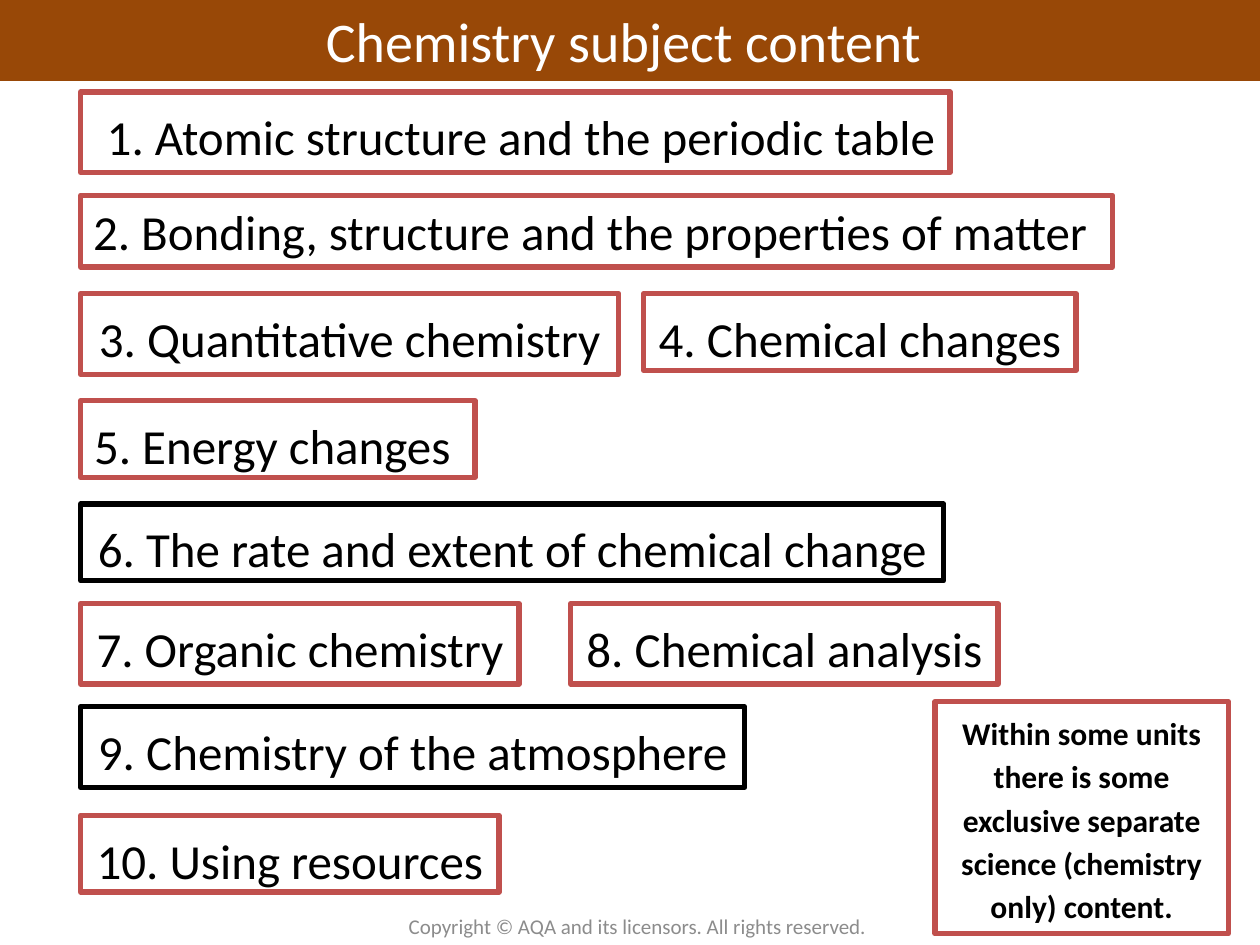
from dataclasses import dataclass

from pptx import Presentation
from pptx.dml.color import RGBColor
from pptx.enum.shapes import MSO_SHAPE
from pptx.enum.text import MSO_ANCHOR, MSO_AUTO_SIZE, PP_ALIGN
from pptx.util import Inches, Pt

RECT = MSO_SHAPE.RECTANGLE
TOP, MIDDLE = MSO_ANCHOR.TOP, MSO_ANCHOR.MIDDLE
LEFT, CENTER = PP_ALIGN.LEFT, PP_ALIGN.CENTER
GROW = MSO_AUTO_SIZE.SHAPE_TO_FIT_TEXT

FONT = "Calibri"
RED, BLACK, WHITE = "C0504D", "000000", "FFFFFF"
BROWN, GREY = "984807", "8C8C8C"
EDGE = 0.64
TALL, SHORT = 0.64, 0.61


@dataclass
class Box:
    text: str
    left: float
    top: float
    width: float
    height: float
    line: str = RED
    fill: str = WHITE
    weight: float = 3
    size: int = 28
    color: str = BLACK
    bold: bool = False
    wrap: bool = False
    align: PP_ALIGN = CENTER
    spacing: float = 1.15


TOPICS = [
    Box("\u00a01. Atomic structure and the periodic table".replace("\u00a0", " "),
        EDGE, 0.73, 6.9, TALL),
    Box("2. Bonding, structure and the properties of matter",
        EDGE, 1.55, 8.19, 0.57, align=LEFT, spacing=1),
    Box("3. Quantitative chemistry", EDGE, 2.33, 4.27, TALL),
    Box("4. Chemical changes", 5.11, 2.33, 3.43, SHORT),
    Box("5. Energy changes ", EDGE, 3.18, 3.13, SHORT),
    Box("6. The rate and extent of chemical change",
        EDGE, 4, 6.85, SHORT, BLACK),
    Box("7. Organic chemistry", EDGE, 4.79, 3.48, TALL),
    Box("8. Chemical analysis", 4.53, 4.79, 3.39, TALL),
    Box("9. Chemistry of the atmosphere", EDGE, 5.61, 5.27, TALL, BLACK),
    Box("10. Using resources", EDGE, 6.47, 3.32, SHORT),
]
NOTE = Box("Within some units there is some exclusive separate science "
           "(chemistry only) content.",
           7.42, 5.57, 2.33, 1.84, size=18, bold=True, wrap=True)
TITLE = Box("Chemistry subject content ", 0, 0, 10, 0.64, BROWN, BROWN, 0.75,
            size=32, color=WHITE, wrap=True, spacing=1)


def rgb(code: str) -> RGBColor:
    return RGBColor.from_string(code)


def write(shape, text: str, size: int, color: str, bold: bool = False,
          align: PP_ALIGN = CENTER, spacing: float = 1) -> None:
    """Set the one paragraph of a shape and its look."""
    shape.text_frame.text = text
    para = shape.text_frame.paragraphs[0]
    para.alignment = align
    para.line_spacing = spacing
    font = para.runs[0].font
    font.name, font.size, font.bold = FONT, Pt(size), bold
    font.color.rgb = rgb(color)


def draw_box(slide, box: Box) -> None:
    shape = slide.shapes.add_shape(
        RECT, Inches(box.left), Inches(box.top),
        Inches(box.width), Inches(box.height))
    shape.shadow.inherit = False
    shape.fill.solid()
    shape.fill.fore_color.rgb = rgb(box.fill)
    shape.line.color.rgb = rgb(box.line)
    shape.line.width = Pt(box.weight)
    frame = shape.text_frame
    frame.word_wrap = box.wrap
    frame.auto_size = GROW
    frame.vertical_anchor = TOP
    write(shape, box.text, box.size, box.color, box.bold,
          box.align, box.spacing)


def draw_footer(slide) -> None:
    shape = slide.shapes.add_textbox(
        Inches(2.1), Inches(7.29), Inches(5.92), Inches(0.12))
    shape.text_frame.word_wrap = True
    shape.text_frame.vertical_anchor = MIDDLE
    write(shape, "Copyright © AQA and its licensors. All rights reserved.",
          12, GREY)


def main() -> None:
    deck = Presentation()
    deck.slide_width, deck.slide_height = Inches(10), Inches(7.5)
    slide = deck.slides.add_slide(deck.slide_layouts[6])
    draw_footer(slide)
    for box in [*TOPICS, NOTE, TITLE]:
        draw_box(slide, box)
    deck.save("out.pptx")


if __name__ == "__main__":
    main()
